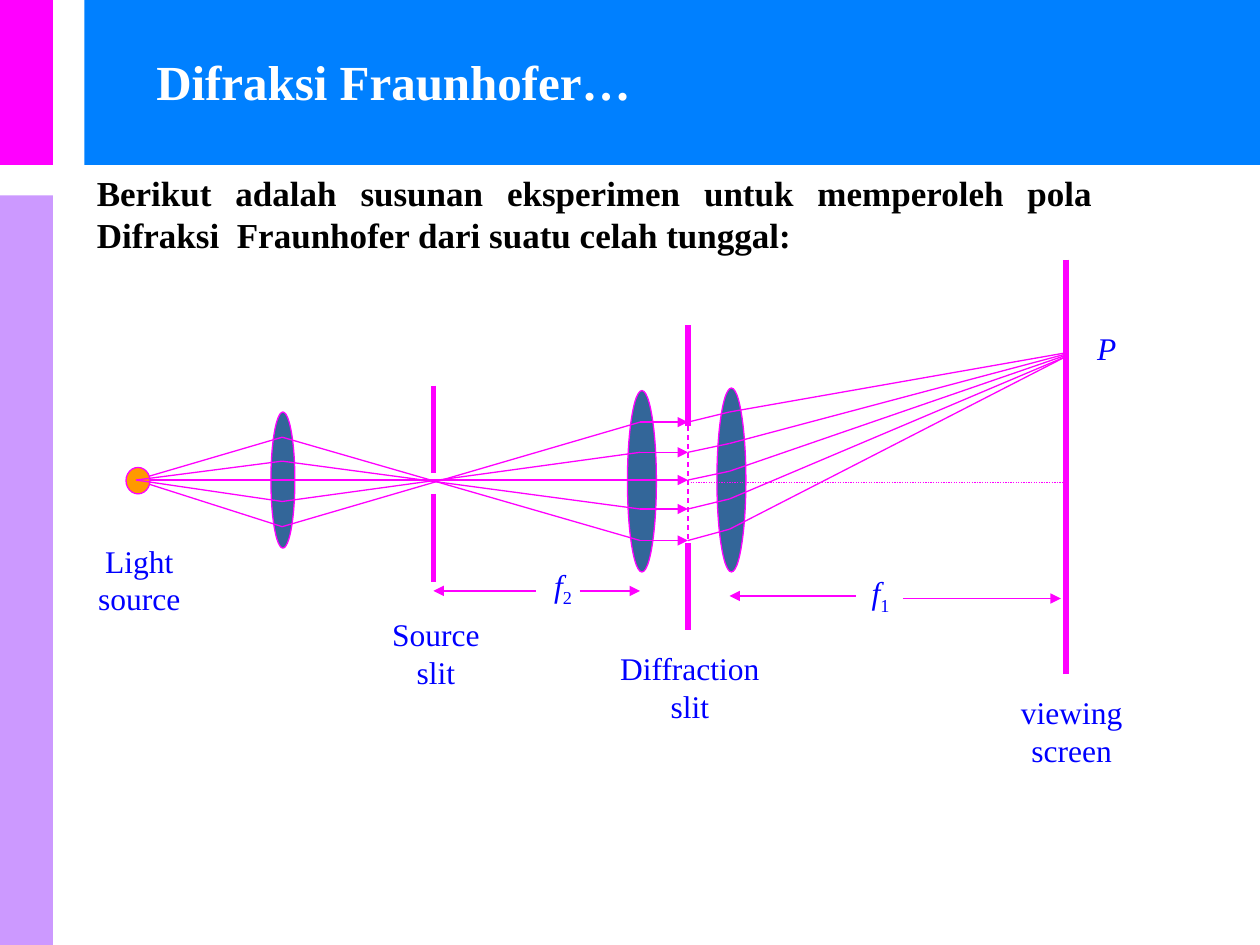
"""Build the slide on the Fraunhofer single-slit diffraction set-up."""
from dataclasses import dataclass

from lxml import etree
from pptx import Presentation
from pptx.dml.color import RGBColor
from pptx.enum import dml, shapes, text
from pptx.oxml.ns import qn
from pptx.util import Inches, Pt


@dataclass(frozen=True)
class Theme:
    font: str = "Times New Roman"
    white: str = "FFFFFF"
    black: str = "000000"
    banner: str = "0080FF"
    magenta: str = "FF00FF"
    lilac: str = "CC99FF"
    lens: str = "336699"
    lamp: str = "FF9900"
    label: str = "0000FF"
    title_size: int = 28
    body_size: int = 20
    label_size: int = 18
    thin: float = 0.75
    thick: float = 3


THEME = Theme()
AXIS = 3.81
SOURCE_X, LENS1_X, SOURCE_SLIT_X, LENS2_X = 1.08, 2.24, 3.44, 5.08
SLIT_X, LENS3_X, SCREEN_X = 5.46, 5.79, 8.46

OUTER_RAYS = [(3.47, 4.29, 4.2, 2.83), (4.18, 3.35, 3.27, 2.8)]
INNER_RAYS = [(3.66, 4.04, 3.96, 2.83), (3.98, 3.59, 3.52, 2.81)]
BARRIERS = [
    (SOURCE_SLIT_X, 3.06, 3.75), (SOURCE_SLIT_X, 3.92, 4.62),
    (SLIT_X, 2.58, 3.38), (SLIT_X, 4.31, 5), (SCREEN_X, 2.06, 5.35),
]
LENSES = [(2.15, 3.27, 0.19, 1.08), (4.98, 3.1, 0.23, 1.44), (5.69, 3.08, 0.23, 1.46)]
FOCAL_ARROWS = [
    (4.25, SOURCE_SLIT_X, 4.69), (4.6, LENS2_X, 4.69),
    (6.79, LENS3_X, 4.73), (7.17, 8.42, 4.75),
]
CAPTIONS = [
    ("Light\nsource", 0.68, 4.25, 0.85), ("Source\nslit", 3.01, 4.83, 0.9),
    ("Diffraction\nslit", 4.82, 5.1, 1.31), ("viewing\nscreen", 8, 5.45, 1.01),
]
SYMBOLS = [("P", "", 8.61, 2.56), ("f", "1", 6.82, 4.5), ("f", "2", 4.3, 4.44)]


def rgb(value):
    """Turn a hex string into a colour."""
    return RGBColor.from_string(value)


def set_font(font, size, color, bold=False):
    """Apply the theme font with a size, colour and weight."""
    font.name, font.size, font.bold = THEME.font, Pt(size), bold
    font.color.rgb = rgb(color)


def add_solid(s, kind, box, fill, outline=None):
    """Add a filled preset shape with an optional thin outline."""
    sp = s.shapes.add_shape(kind, *map(Inches, box))
    sp.shadow.inherit = False
    sp.fill.solid()
    sp.fill.fore_color.rgb = rgb(fill)
    if outline:
        sp.line.color.rgb = rgb(outline)
        sp.line.width = Pt(THEME.thin)
    else:
        sp.line.fill.background()


def add_line(s, start, end, width=THEME.thin, dash=None, arrow=False):
    """Add a straight magenta line, dashed or with an arrowhead on request."""
    sp = s.shapes.add_connector(shapes.MSO_CONNECTOR.STRAIGHT, *map(Inches, (*start, *end)))
    sp.line.color.rgb = rgb(THEME.magenta)
    sp.line.width = Pt(width)
    if dash:
        sp.line.dash_style = dash
    if arrow:
        etree.SubElement(sp.line._get_or_add_ln(), qn("a:tailEnd"), type="triangle")
    etree.SubElement(sp._element.spPr, qn("a:effectLst"))


def add_path(s, points):
    """Join points by lines, with an arrowhead where light meets the slit."""
    for start, end in zip(points, points[1:]):
        add_line(s, start, end, arrow=end[0] == SLIT_X)


def add_ray(s, lens1_y, lens2_y, lens3_y, screen_y):
    """Trace one ray from the lamp through every lens to the screen."""
    add_path(s, [(SOURCE_X, AXIS), (LENS1_X, lens1_y), (LENS2_X, lens2_y),
                 (SLIT_X, lens2_y), (LENS3_X, lens3_y), (SCREEN_X, screen_y)])


def add_text(s, content, box, wrap=False):
    """Add a text box and return its text frame."""
    tf = s.shapes.add_textbox(*map(Inches, box)).text_frame
    tf.word_wrap = wrap
    tf.text = content
    return tf


def add_caption(s, content, left, top, width):
    """Add a centred two-line caption."""
    for p in add_text(s, content, (left, top, width, 0.7)).paragraphs:
        p.alignment = text.PP_ALIGN.CENTER
        set_font(p.font, THEME.label_size, THEME.label)


def add_symbol(s, letter, index, left, top):
    """Add an italic symbol with an optional upright subscript."""
    p = add_text(s, letter, (left, top, 0.35, 0.4)).paragraphs[0]
    set_font(p.font, THEME.label_size, THEME.label)
    p.runs[0].font.italic = True
    if index:
        r = p.add_run()
        r.text = index
        r._r.get_or_add_rPr().set("baseline", "-25000")


def add_heading(s):
    """Draw the coloured bands, the title and the introduction."""
    bands = [((0.67, 0, 9.33, 1.31), THEME.banner), ((0, 0, 0.42, 1.31), THEME.magenta),
             ((0, 1.55, 0.42, 5.95), THEME.lilac)]
    for box, fill in bands:
        add_solid(s, shapes.MSO_SHAPE.RECTANGLE, box, fill)
    title = s.shapes.title
    title.left, title.top, title.width, title.height = map(Inches, (1.14, 0.36, 4.33, 0.57))
    s.shapes._spTree.append(title._element)
    tf = title.text_frame
    tf.text = "Difraksi Fraunhofer…"
    tf.vertical_anchor = text.MSO_ANCHOR.MIDDLE
    p = tf.paragraphs[0]
    p.alignment = text.PP_ALIGN.LEFT
    set_font(p.font, THEME.title_size, THEME.white, bold=True)
    intro = ("Berikut adalah susunan eksperimen untuk memperoleh pola "
             "Difraksi  Fraunhofer dari suatu celah tunggal:")
    p = add_text(s, intro, (0.67, 1.31, 8.1, 0.77), wrap=True).paragraphs[0]
    p.alignment = text.PP_ALIGN.JUSTIFY
    set_font(p.font, THEME.body_size, THEME.black, bold=True)


def add_optics(s):
    """Draw the barriers, lenses, lamp, axis and rays."""
    oval = shapes.MSO_SHAPE.OVAL
    for x, top, bottom in BARRIERS:
        add_line(s, (x, top), (x, bottom), THEME.thick)
    for box in LENSES:
        add_solid(s, oval, box, THEME.lens, THEME.magenta)
    for ray in OUTER_RAYS:
        add_ray(s, *ray)
    add_path(s, [(SOURCE_X, AXIS), (SLIT_X, AXIS), (LENS3_X, 3.74), (SCREEN_X, 2.82)])
    add_solid(s, oval, (1, 3.71, 0.19, 0.21), THEME.lamp, THEME.magenta)
    for ray in INNER_RAYS:
        add_ray(s, *ray)
    add_line(s, (SLIT_X, 3.38), (SLIT_X, 4.31), dash=dml.MSO_LINE.DASH)
    add_line(s, (SLIT_X, 3.83), (SCREEN_X, 3.83), dash=dml.MSO_LINE.ROUND_DOT)


def add_labels(s):
    """Add the captions, symbols and focal-length arrows."""
    for caption in CAPTIONS:
        add_caption(s, *caption)
    for symbol in SYMBOLS:
        add_symbol(s, *symbol)
    for start, end, y in FOCAL_ARROWS:
        add_line(s, (start, y), (end, y), arrow=True)


def main():
    """Create the presentation and save it."""
    prs = Presentation()
    prs.slide_width, prs.slide_height = Inches(10), Inches(7.5)
    s = prs.slides.add_slide(prs.slide_layouts[5])
    s.background.fill.solid()
    s.background.fill.fore_color.rgb = rgb(THEME.white)
    add_heading(s)
    add_optics(s)
    add_labels(s)
    prs.save("out.pptx")


if __name__ == "__main__":
    main()
